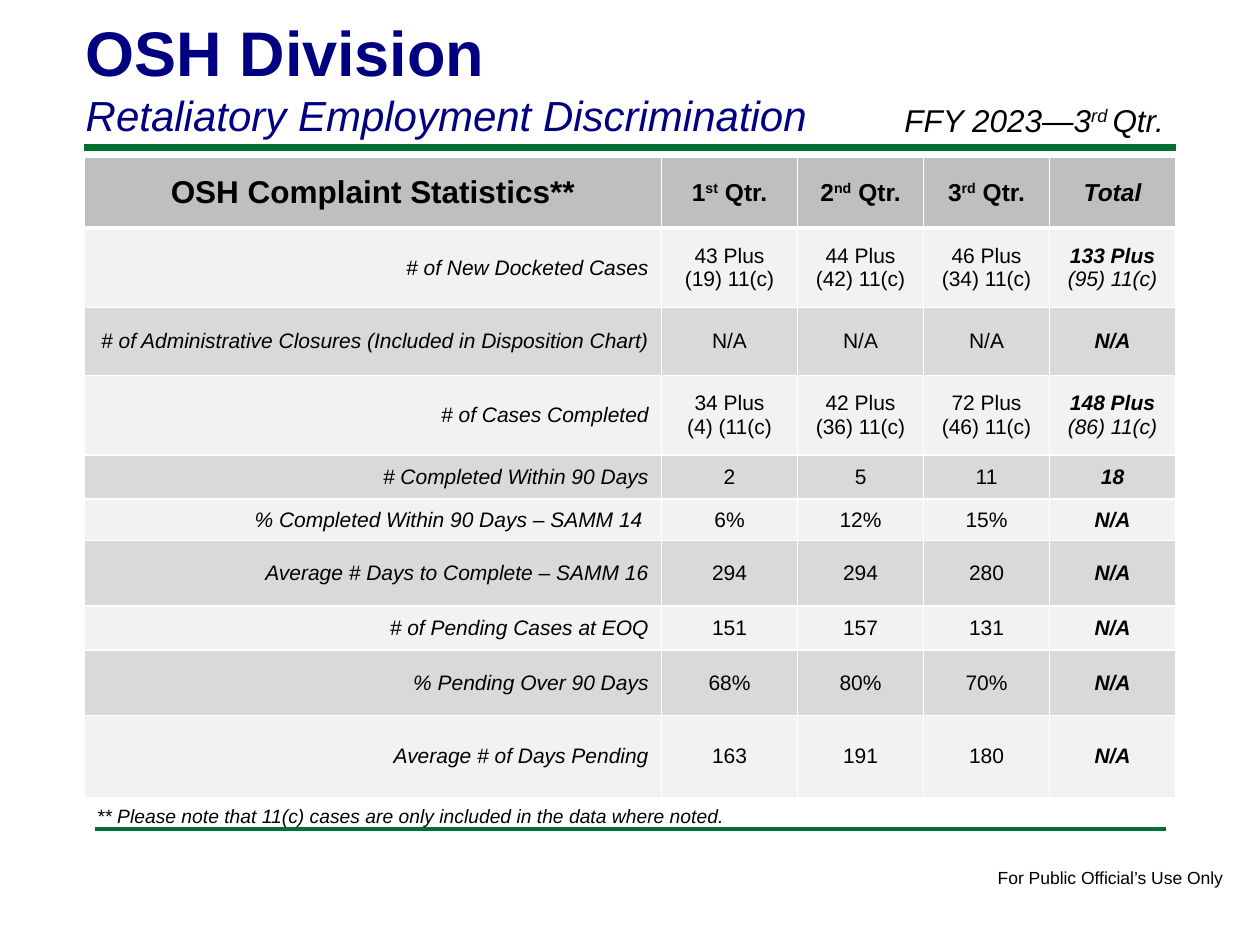
from pptx import Presentation
from pptx.dml.color import RGBColor
from pptx.enum.shapes import MSO_CONNECTOR
from pptx.enum.text import MSO_ANCHOR, MSO_AUTO_SIZE, PP_ALIGN
from pptx.oxml.ns import qn
from pptx.util import Inches, Pt
from lxml.etree import SubElement

NAVY = RGBColor(0x00, 0x00, 0x80)
GREEN = RGBColor(0x00, 0x70, 0x30)
BLACK = RGBColor(0x00, 0x00, 0x00)
WHITE = RGBColor(0xFF, 0xFF, 0xFF)
HEADER_GRAY = RGBColor(0xBF, 0xBF, 0xBF)
LIGHT_GRAY = RGBColor(0xF2, 0xF2, 0xF2)
MID_GRAY = RGBColor(0xD9, 0xD9, 0xD9)

COL_WIDTHS = [4.58, 1.08, 1, 1, 1]
ROW_HEIGHTS = [0.56, 0.63, 0.54, 0.63, 0.35, 0.33, 0.52, 0.35, 0.52, 0.65]
HEADER = ["OSH Complaint Statistics**", "1^st^ Qtr.", "2^nd^ Qtr.", "3^rd^ Qtr.", "Total"]
# A line break inside a value starts a new paragraph
ROWS = [
    ["# of New Docketed Cases", "43 Plus\n(19) 11(c)", "44 Plus\n(42) 11(c)",
     "46 Plus\n(34) 11(c)", "133 Plus\n(95) 11(c)"],
    ["# of Administrative Closures (Included in Disposition Chart)",
     "N/A", "N/A", "N/A", "N/A"],
    ["# of Cases Completed", "34 Plus\n(4) (11(c)", "42 Plus\n(36) 11(c)",
     "72 Plus\n(46) 11(c)", "148 Plus\n(86) 11(c)"],
    ["# Completed Within 90 Days", "2", "5", "11", "18"],
    ["% Completed Within 90 Days – SAMM 14 ", "6%", "12%", "15%", "N/A"],
    ["Average # Days to Complete – SAMM 16", "294", "294", "280", "N/A"],
    ["# of Pending Cases at EOQ", "151", "157", "131", "N/A"],
    ["% Pending Over 90 Days", "68%", "80%", "70%", "N/A"],
    ["Average # of Days Pending", "163", "191", "180", "N/A"],
]


def write(p, text, size=12, color=BLACK, bold=False, italic=False,
          align=PP_ALIGN.LEFT, line=None, after=None):
    """Fill a paragraph; parts between ^ marks are superscript."""
    p.alignment = align
    if line:
        p.line_spacing = line
    if after is not None:
        p.space_after = Pt(after)
    for i, part in enumerate(text.split("^")):
        r = p.add_run()
        r.text = part
        r.font.name = "Arial"
        r.font.size = Pt(size)
        r.font.color.rgb = color
        r.font.bold = bold
        r.font.italic = italic
        if i % 2:
            r._r.get_or_add_rPr().set("baseline", "30000")


def add_text(s, box, text, wrap=True, **fmt):
    tf = s.shapes.add_textbox(*map(Inches, box)).text_frame
    tf.word_wrap = wrap
    write(tf.paragraphs[0], text, **fmt)


def add_rule(s, x1, x2, y, width):
    line = s.shapes.add_connector(MSO_CONNECTOR.STRAIGHT, Inches(x1), Inches(y),
                                  Inches(x2), Inches(y))
    line.line.color.rgb = GREEN
    line.line.width = Pt(width)
    SubElement(line._element.spPr, qn("a:effectLst"))


def add_heading(s, left, top, width, height):
    title = s.shapes.title
    title.left, title.top = Inches(left), Inches(top)
    title.width, title.height = Inches(width), Inches(height)
    tf = title.text_frame
    tf.auto_size = MSO_AUTO_SIZE.NONE
    tf.vertical_anchor = MSO_ANCHOR.TOP
    write(tf.paragraphs[0], "OSH Division", size=36, color=NAVY, bold=True)
    write(tf.add_paragraph(), "Retaliatory Employment Discrimination",
          size=24, color=NAVY, italic=True)
    add_text(s, (left + 6.5, top + 0.69, 2.5, 0.4), "FFY 2023—3^rd ^Qtr.",
             size=18, italic=True)


def style_cell(cell, fill, bottom=1, top=1):
    # Borders come before the fill in the cell properties
    tcPr = cell._tc.get_or_add_tcPr()
    for side, width in (("L", 1), ("R", 1), ("T", top), ("B", bottom)):
        ln = SubElement(tcPr, qn(f"a:ln{side}"), w=str(Pt(width)))
        color = SubElement(SubElement(ln, qn("a:solidFill")), qn("a:srgbClr"))
        color.set("val", str(WHITE))
    cell.fill.solid()
    cell.fill.fore_color.rgb = fill
    cell.vertical_anchor = MSO_ANCHOR.MIDDLE


def fill_body_cell(cell, text, col):
    tf = cell.text_frame
    lines = text.split("\n")
    total = col == len(COL_WIDTHS) - 1
    for i, line in enumerate(lines):
        p = tf.paragraphs[0] if i == 0 else tf.add_paragraph()
        if col == 0:
            write(p, line, italic=True, align=PP_ALIGN.RIGHT)
        else:
            write(p, line, bold=total and i == 0, italic=total,
                  align=PP_ALIGN.CENTER)


def add_statistics(s, left, top):
    frame = s.shapes.add_table(len(ROW_HEIGHTS), len(COL_WIDTHS), Inches(left), Inches(top),
                               Inches(sum(COL_WIDTHS)), Inches(sum(ROW_HEIGHTS)))
    table = frame.table
    table.first_row = table.horz_banding = False
    for column, width in zip(table.columns, COL_WIDTHS):
        column.width = Inches(width)
    for row, height in zip(table.rows, ROW_HEIGHTS):
        row.height = Inches(height)

    # Header row
    for c, text in enumerate(HEADER):
        cell = table.cell(0, c)
        style_cell(cell, HEADER_GRAY, bottom=3)
        write(cell.text_frame.paragraphs[0], text, size=14 if c else 18, bold=True,
              italic=text == "Total", align=PP_ALIGN.CENTER)

    # Body rows in alternating grays
    for r, values in enumerate(ROWS, 1):
        for c, text in enumerate(values):
            cell = table.cell(r, c)
            style_cell(cell, LIGHT_GRAY if r % 2 else MID_GRAY, top=3 if r == 1 else 1)
            fill_body_cell(cell, text, c)


def add_footer(s, left, top):
    add_text(s, (left, top, 5.21, 0.59),
             "** Please note that 11(c) cases are only included in the data where noted.",
             wrap=False, size=11, italic=True)
    add_text(s, (left + 7.15, top + 0.5, 2.01, 0.27), "For Public Official’s Use Only",
             wrap=False, size=10)


def main():
    prs = Presentation()
    prs.slide_width, prs.slide_height = Inches(10), Inches(7.5)
    s = prs.slides.add_slide(prs.slide_layouts[5])
    add_rule(s, 0.67, 9.33, 1.17, 4)
    add_rule(s, 0.75, 9.25, 6.58, 2)
    add_statistics(s, 0.67, 1.25)
    add_heading(s, 0.58, 0.06, 8.25, 1.11)
    add_footer(s, 0.67, 6.33)
    prs.save("out.pptx")


if __name__ == "__main__":
    main()
